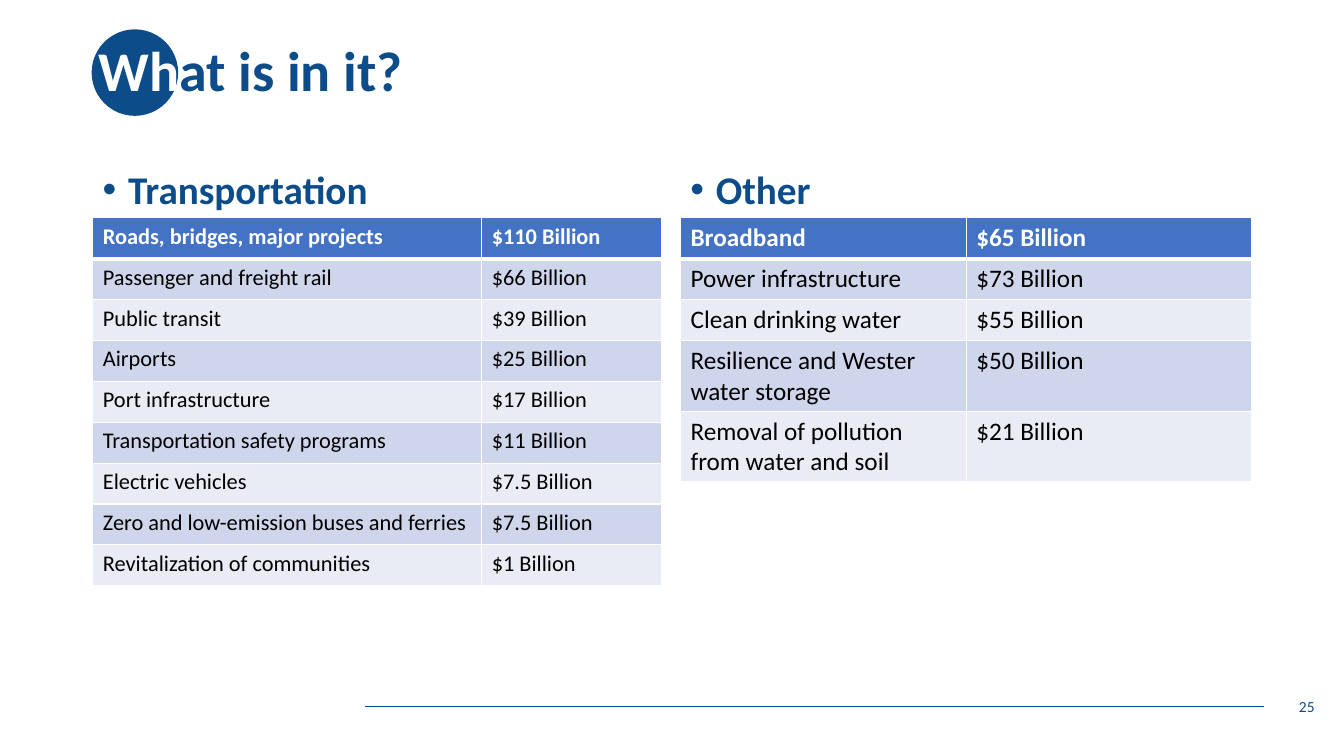
from lxml import etree
from pptx import Presentation
from pptx.dml.color import RGBColor
from pptx.enum import shapes, text
from pptx.oxml import ns
from pptx.util import Cm, Pt

NAVY = RGBColor(0x0C, 0x4C, 0x88)
WHITE = RGBColor(0xFF, 0xFF, 0xFF)
BLACK = RGBColor(0, 0, 0)
HEADER_BLUE = RGBColor(0x44, 0x72, 0xC4)
BAND_DARK = RGBColor(0xCF, 0xD5, 0xEA)
BAND_LIGHT = RGBColor(0xE9, 0xEB, 0xF5)

HEADING_HEIGHT = 2.29
ROW_HEIGHT = 1.03

TRANSPORTATION = [
    ("Roads, bridges, major projects", "$110 Billion"),
    ("Passenger and freight rail", "$66 Billion"),
    ("Public transit", "$39 Billion"),
    ("Airports", "$25 Billion"),
    ("Port infrastructure", "$17 Billion"),
    ("Transportation safety programs", "$11 Billion"),
    ("Electric vehicles", "$7.5 Billion"),
    ("Zero and low-emission buses and ferries", "$7.5 Billion"),
    ("Revitalization of communities", "$1 Billion"),
]
OTHER = [
    ("Broadband", "$65 Billion"),
    ("Power infrastructure", "$73 Billion"),
    ("Clean drinking water", "$55 Billion"),
    ("Resilience and Wester water storage", "$50 Billion"),
    ("Removal of pollution from water and soil", "$21 Billion"),
]


def add_span(para, words, color, **formats):
    span = para.add_run()
    span.text = words
    span.font.color.rgb = color
    for name, value in {"name": "Calibri", **formats}.items():
        setattr(span.font, name, value)


def add_text_box(page, left, top, width, height, anchor):
    box = page.shapes.add_textbox(Cm(left), Cm(top), Cm(width), Cm(height))
    box.text_frame.word_wrap = True
    box.text_frame.vertical_anchor = anchor
    return box.text_frame.paragraphs[0]


def add_title(page, left, top, width, height):
    # Disc behind the first two letters
    disc = page.shapes.add_shape(shapes.MSO_SHAPE.OVAL, Cm(left + 0.07),
                                 Cm(top + 0.74), Cm(2.18), Cm(2.18))
    disc.shadow.inherit = False
    disc.fill.solid()
    disc.fill.fore_color.rgb = NAVY
    disc.line.fill.background()

    # Two-coloured title
    para = add_text_box(page, left, top, width, height, text.MSO_ANCHOR.MIDDLE)
    para.line_spacing = 0.9
    for words, color in (("Wh", WHITE), ("at is in it?", NAVY)):
        add_span(para, words, color, size=Pt(40), bold=True)


def add_footer(page, left, top, width, height):
    # Rule at mid-height, page number at the right end
    middle = Cm(top + height / 2)
    rule = page.shapes.add_connector(shapes.MSO_CONNECTOR.STRAIGHT, Cm(left),
                                     middle, Cm(left + width - 1.53), middle)
    rule.line.color.rgb = NAVY
    rule.line.width = Pt(0.5)
    etree.SubElement(rule.element.spPr, ns.qn("a:effectLst"))

    para = add_text_box(page, left + width - 7.62, top, 7.62, height,
                        text.MSO_ANCHOR.MIDDLE)
    para.alignment = text.PP_ALIGN.RIGHT
    add_span(para, "25", NAVY, size=Pt(11))


def add_borders(cell, row):
    points = {"L": 1, "R": 1, "T": 3 if row == 1 else 1, "B": 3 if row == 0 else 1}
    properties = cell._tc.get_or_add_tcPr()
    for side, width in points.items():
        border = etree.SubElement(properties, ns.qn(f"a:ln{side}"), w=str(Pt(width)))
        fill = etree.SubElement(border, ns.qn("a:solidFill"))
        etree.SubElement(fill, ns.qn("a:srgbClr"), val=str(WHITE))


def add_spending(page, left, top, columns, heading, items, size):
    width = sum(columns)

    # Bulleted heading
    para = add_text_box(page, left, top, width, HEADING_HEIGHT, text.MSO_ANCHOR.BOTTOM)
    properties = para._p.get_or_add_pPr()
    properties.set("marL", str(Cm(0.64)))
    properties.set("indent", str(-Cm(0.64)))
    etree.SubElement(properties, ns.qn("a:buFont"), typeface="Arial")
    etree.SubElement(properties, ns.qn("a:buChar"), char="•")
    para.line_spacing = 0.9
    add_span(para, heading, NAVY, size=Pt(28), bold=True)

    # Table directly below the heading
    table = page.shapes.add_table(
        len(items), len(columns), Cm(left), Cm(top + HEADING_HEIGHT),
        Cm(width), Cm(ROW_HEIGHT * len(items))).table
    for column, column_width in zip(table.columns, columns):
        column.width = Cm(column_width)
    for row, item in enumerate(items):
        is_header = row == 0
        band = HEADER_BLUE if is_header else BAND_DARK if row % 2 else BAND_LIGHT
        for column, words in enumerate(item):
            cell = table.cell(row, column)
            add_borders(cell, row)
            cell.fill.solid()
            cell.fill.fore_color.rgb = band
            add_span(cell.text_frame.paragraphs[0], words,
                     WHITE if is_header else BLACK, size=Pt(size), bold=is_header)


def main():
    deck = Presentation()
    deck.slide_width, deck.slide_height = Cm(33.87), Cm(19.05)
    page = deck.slides.add_slide(deck.slide_layouts[6])
    add_footer(page, 9.19, 17.3, 24.19, 1.02)
    add_title(page, 2.24, 0, 29.21, 3.68)
    add_spending(page, 2.34, 3.2, (9.8, 4.53), "Transportation", TRANSPORTATION, 16)
    add_spending(page, 17.15, 3.2, (7.2, 7.2), "Other", OTHER, 18)
    deck.save("out.pptx")


if __name__ == "__main__":
    main()
